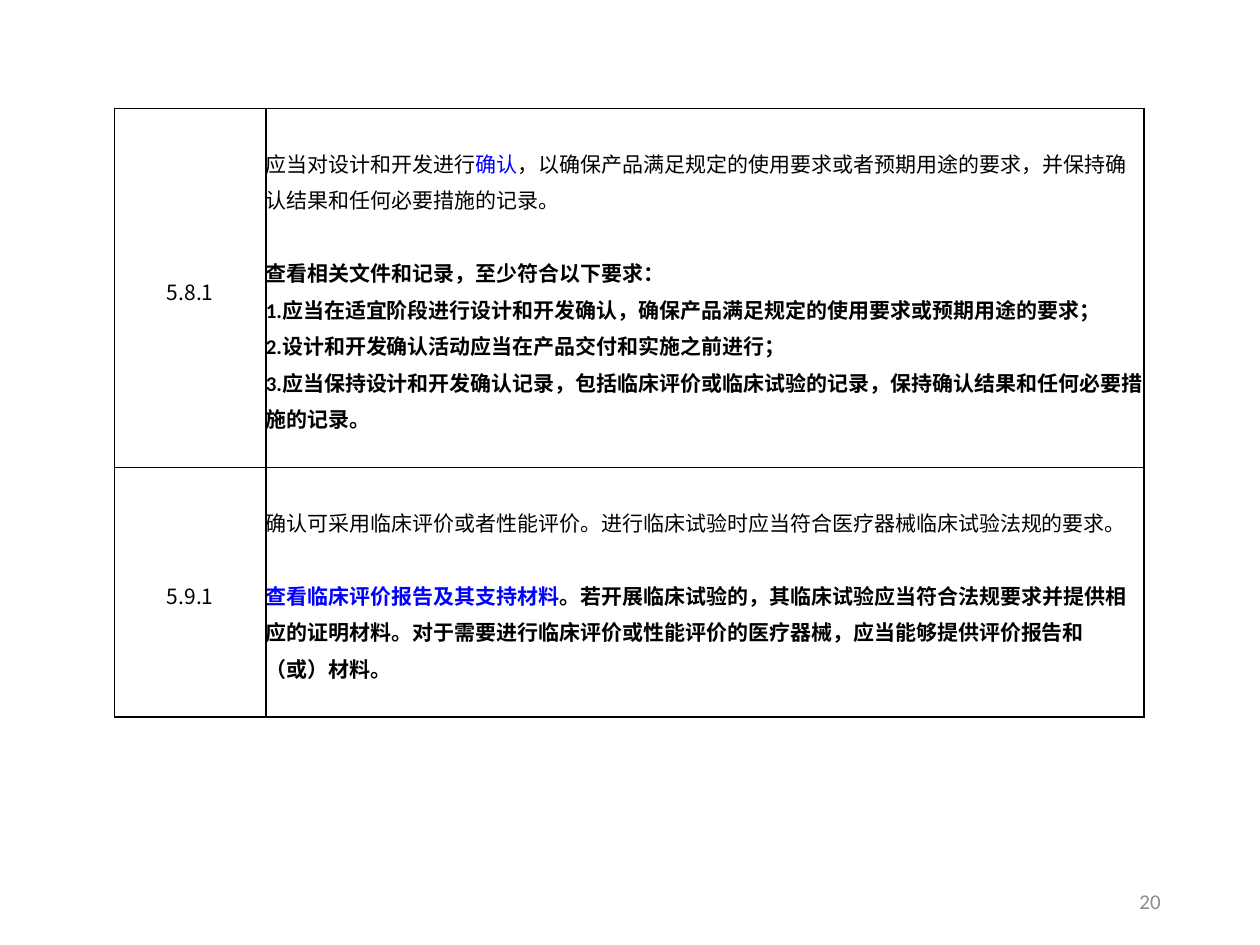
from lxml import etree
from pptx import Presentation, util as u
from pptx.dml.color import RGBColor
from pptx.enum import text
from pptx.oxml.ns import qn

CJK, LATIN = "Noto Sans CJK SC", "Calibri"
BLACK, BLUE, GREY, BORDER = "000000", "0000FF", "8C8C8C", "080000"


def add_run(p, words, color=BLACK, bold=False, latin=LATIN):
    r = p.add_run()
    r.text = words
    r.font.size, r.font.bold, r.font.name = u.Pt(12), bold, latin
    r.font.color.rgb = RGBColor.from_string(color)
    etree.SubElement(r._r.get_or_add_rPr(), qn("a:ea"), typeface=CJK)


def add_border(cell, index, side, color, width):
    ln = etree.Element(qn(f"a:ln{side}"), w=str(u.Pt(width)))
    fill = etree.SubElement(ln, qn("a:solidFill"))
    etree.SubElement(fill, qn("a:srgbClr"), val=color)
    cell._tc.get_or_add_tcPr().insert(index, ln)


# Each clause: number, row height, requirement runs, then bold check paragraphs
clauses = [
    ("5.8.1", 2.85,
     [("应当对设计和开发进行", BLACK), ("确认", BLUE),
      ("，以确保产品满足规定的使用要求或者预期用途的要求，并保持确认结果和任何必要措施的记录。", BLACK)],
     [[("查看相关文件和记录，至少符合以下要求：", BLACK)],
      [("1.应当在适宜阶段进行设计和开发确认，确保产品满足规定的使用要求或预期用途的要求；", BLACK)],
      [("2.设计和开发确认活动应当在产品交付和实施之前进行；", BLACK)],
      [("3.应当保持设计和开发确认记录，包括临床评价或临床试验的记录，保持确认结果和任何必要措施的记录。", BLACK)]]),
    ("5.9.1", 1.98,
     [("确认可采用临床评价或者性能评价。进行临床试验时应当符合医疗器械临床试验法规的要求。", BLACK)],
     [[("查看临床评价报告及其支持材料", BLUE),
       ("。若开展临床试验的，其临床试验应当符合法规要求并提供相应的证明材料。"
        "对于需要进行临床评价或性能评价的医疗器械，应当能够提供评价报告和（或）材料。", BLACK)]]),
]
col_widths = [1.2, 6.97]

prs = Presentation()
prs.slide_width, prs.slide_height = u.Inches(10), u.Inches(7.5)
s = prs.slides.add_slide(prs.slide_layouts[6])

table = s.shapes.add_table(
    len(clauses), len(col_widths), u.Inches(0.91), u.Inches(0.86),
    u.Inches(sum(col_widths)), u.Inches(sum(c[1] for c in clauses))).table
table.first_row = table.horz_banding = False
for column, width in zip(table.columns, col_widths):
    column.width = u.Inches(width)

for i, (number, height, requirement, checks) in enumerate(clauses):
    table.rows[i].height = u.Inches(height)
    number_cell, text_cell = table.cell(i, 0), table.cell(i, 1)

    p = number_cell.text_frame.paragraphs[0]
    p.alignment = text.PP_ALIGN.CENTER
    add_run(p, number, latin=CJK)

    tf = text_cell.text_frame
    for n, runs in enumerate([requirement] + checks):
        p = tf.paragraphs[0] if n == 0 else tf.add_paragraph()
        if n == 1:
            p.space_before = u.Pt(21)
        for words, color in runs:
            add_run(p, words, color, bold=n > 0)

    for cell in (number_cell, text_cell):
        cell.margin_left = cell.margin_right = cell.margin_top = cell.margin_bottom = 0
        cell.vertical_anchor = text.MSO_ANCHOR.MIDDLE
        cell.fill.background()
        for p in cell.text_frame.paragraphs:
            p.line_spacing = 1.2
        for k, side in enumerate("LRTB"):
            outer_right = cell is text_cell and side == "R"
            add_border(cell, k, side, *((BLACK, 0.75) if outer_right else (BORDER, 1)))

sp = s.shapes.add_textbox(u.Inches(7.06), u.Inches(6.95), u.Inches(2.25), u.Inches(0.4))
tf = sp.text_frame
tf.word_wrap = True
tf.vertical_anchor = text.MSO_ANCHOR.MIDDLE
p = tf.paragraphs[0]
p.alignment = text.PP_ALIGN.RIGHT
add_run(p, "20", GREY)

prs.save("out.pptx")
